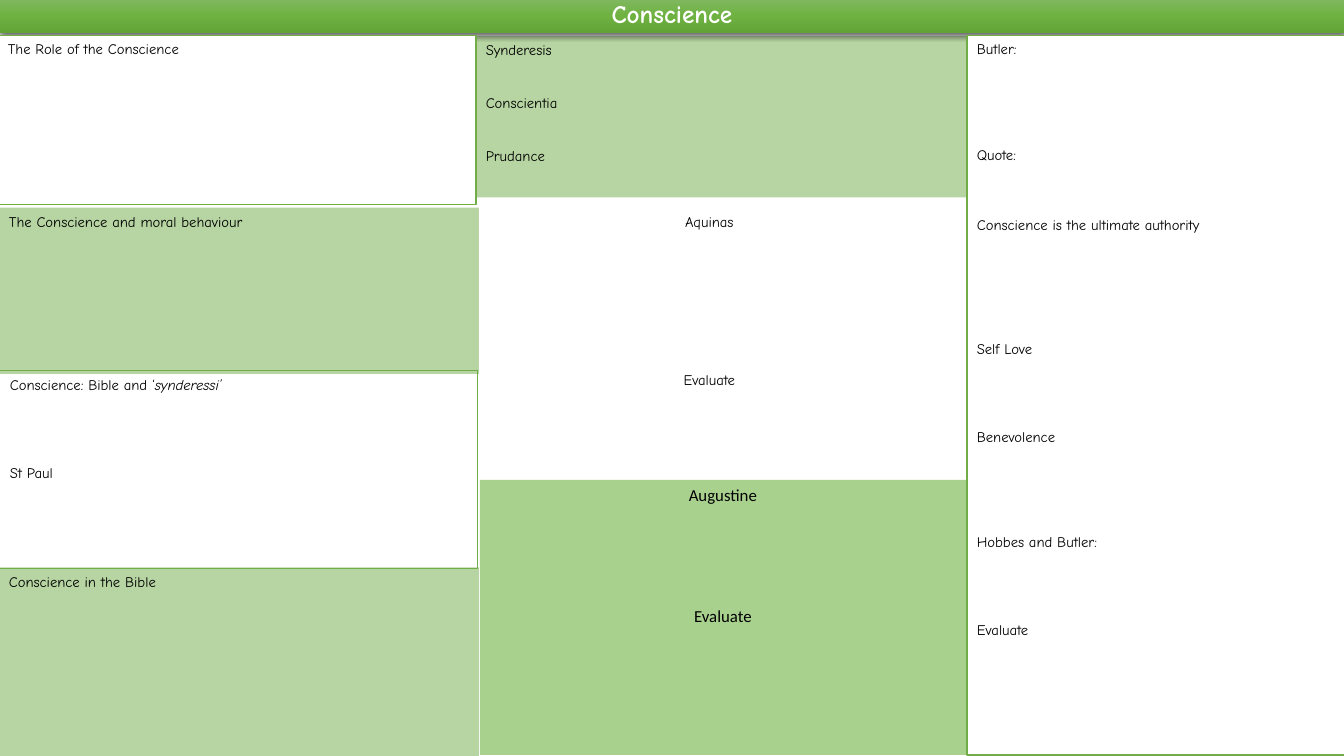
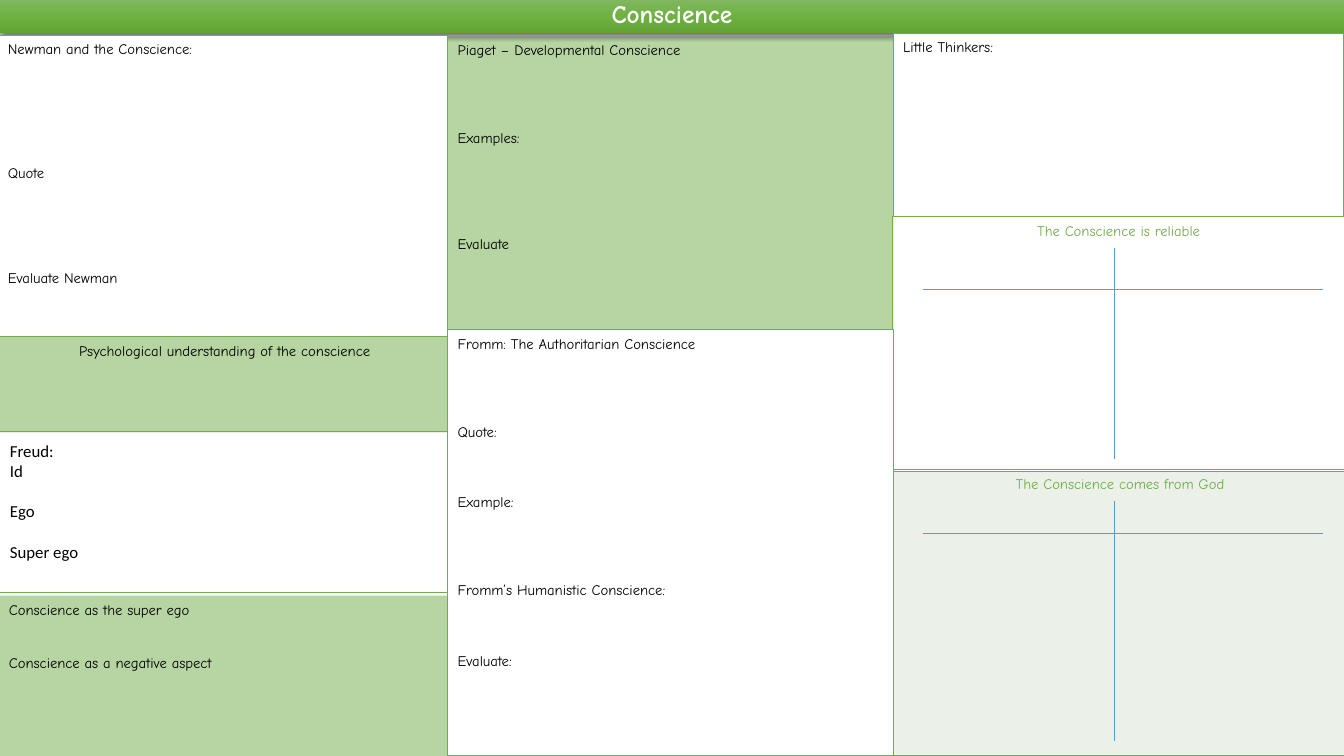
from lxml import etree
from pptx import Presentation
from pptx.dml.color import RGBColor
from pptx.enum.shapes import MSO_CONNECTOR, MSO_SHAPE
from pptx.enum.text import MSO_ANCHOR, PP_ALIGN
from pptx.oxml import parse_xml
from pptx.oxml.ns import nsdecls, qn
from pptx.util import Inches, Pt

WIDTH, HEIGHT = 13.33, 7.5
BLACK = RGBColor(0x00, 0x00, 0x00)
WHITE = RGBColor(0xFF, 0xFF, 0xFF)
GREEN = RGBColor(0x70, 0xAD, 0x47)
LIGHT_GREEN = RGBColor(0xA9, 0xD1, 0x8E)
PALE_GREEN = RGBColor(0xEB, 0xF1, 0xE9)
BLUE = RGBColor(0x5B, 0x9B, 0xD5)
BAND_STOPS = {
    0: RGBColor(0x81, 0xB8, 0x61),
    50: RGBColor(0x6F, 0xB2, 0x42),
    100: RGBColor(0x62, 0xA3, 0x36),
}

NOTE = {"name": "Comic Neue", "size": Pt(10.5)}
PLAIN = {"name": "Calibri", "size": Pt(12)}
TITLE = {"name": "Comic Neue", "size": Pt(18), "bold": True}
LINE_HEIGHTS = {"Comic Neue": 12.57, "Calibri": 14.4}

LEFT, CENTER = PP_ALIGN.LEFT, PP_ALIGN.CENTER


def write_lines(frame, lines, style=NOTE, color=BLACK, align=LEFT):
    """Write (lines left free above, text) pairs; text between asterisks is italic."""
    frame.word_wrap = True
    for index, (free_lines, text) in enumerate(lines):
        paragraph = frame.paragraphs[0] if index == 0 else frame.add_paragraph()
        paragraph.alignment = align
        if free_lines:
            paragraph.space_before = Pt(free_lines * LINE_HEIGHTS[style["name"]])
        for position, part in enumerate(text.split("*")):
            if not part:
                continue
            run = paragraph.add_run()
            run.text = part
            for attribute, value in style.items():
                setattr(run.font, attribute, value)
            run.font.italic = position % 2 == 1
            run.font.color.rgb = color


def add_rectangle(slide, box):
    shape = slide.shapes.add_shape(MSO_SHAPE.RECTANGLE, *map(Inches, box))
    shape.shadow.inherit = False
    shape.line.fill.background()
    shape.text_frame.vertical_anchor = MSO_ANCHOR.TOP
    return shape


def add_panel(slide, box, lines=(), fill=None, opacity=100, border=0, **text_format):
    shape = add_rectangle(slide, box)
    if fill is None:
        shape.fill.background()
    else:
        shape.fill.solid()
        shape.fill.fore_color.rgb = fill
    if opacity < 100:
        color = shape.fill._xPr.find(qn("a:solidFill"))[0]
        etree.SubElement(color, qn("a:alpha"), val=str(opacity * 1000))
    if border:
        shape.line.color.rgb = GREEN
        shape.line.width = Pt(border)
    write_lines(shape.text_frame, lines, **text_format)


def add_tinted_panel(slide, box, lines, **text_format):
    add_panel(slide, box, lines, GREEN, opacity=50, **text_format)


def add_framed_panel(slide, box, lines):
    add_panel(slide, box, lines, WHITE, border=1)


def add_title_band(slide, title="Conscience"):
    band = add_rectangle(slide, (0, -0.02, WIDTH, 0.35))
    stops = "".join(
        f'<a:gs pos="{place * 1000}"><a:srgbClr val="{color}"/></a:gs>'
        for place, color in BAND_STOPS.items()
    )
    properties = band._element.spPr
    properties.find(qn("a:prstGeom")).addnext(parse_xml(
        f'<a:gradFill {nsdecls("a")}><a:gsLst>{stops}</a:gsLst>'
        '<a:lin ang="5400000" scaled="0"/></a:gradFill>'
    ))
    properties.find(qn("a:effectLst")).append(parse_xml(
        f'<a:outerShdw {nsdecls("a")} blurRad="{Pt(4.5)}" dist="{Pt(1.5)}" '
        'dir="5400000" rotWithShape="0"><a:srgbClr val="000000">'
        '<a:alpha val="63000"/></a:srgbClr></a:outerShdw>'
    ))
    frame = band.text_frame
    frame.vertical_anchor = MSO_ANCHOR.MIDDLE
    write_lines(frame, [(0, title)], TITLE, WHITE, CENTER)
    frame.paragraphs[0].line_spacing = 0.9


def add_table_panel(slide, box, lines, **text_format):
    """Add a one-cell table with a green border."""
    table = slide.shapes.add_table(1, 1, *map(Inches, box)).table
    table.first_row = table.horz_banding = False
    cell = table.cell(0, 0)
    cell.fill.solid()
    cell.fill.fore_color.rgb = PALE_GREEN
    properties = cell._tc.get_or_add_tcPr()
    for index, side in enumerate(("lnL", "lnR", "lnT", "lnB")):
        properties.insert(index, parse_xml(
            f'<a:{side} {nsdecls("a")} w="{Pt(1)}"><a:solidFill>'
            f'<a:srgbClr val="{GREEN}"/></a:solidFill></a:{side}>'
        ))
    write_lines(cell.text_frame, lines, **text_format)


def add_line(slide, *ends):
    line = slide.shapes.add_connector(MSO_CONNECTOR.STRAIGHT, *map(Inches, ends))
    line.line.color.rgb = BLUE
    line.line.width = Pt(0.5)
    etree.SubElement(line._element.spPr, qn("a:effectLst"))


def add_argument_cross(slide, top, bar, bottom):
    """Draw the two lines that part the arguments for and against."""
    add_line(slide, 9.15, bar, 13.12, bar)
    add_line(slide, 11.05, top, 11.05, bottom)


def build_thinkers_slide(slide):
    add_tinted_panel(slide, (4.72, 0.36, 4.86, 1.6), [
        (0, "Synderesis"), (2, "Conscientia"), (2, "Prudance")])
    add_title_band(slide)
    add_framed_panel(slide, (-0.02, 0.35, 4.74, 1.68), [(0, "The Role of the Conscience")])
    add_tinted_panel(slide, (-0.01, 2.06, 4.76, 1.65), [
        (0, "The Conscience and moral behaviour")])
    add_framed_panel(slide, (9.59, 0.35, 3.75, 7.14), [
        (0, "Butler:"),
        (5, "Quote:"),
        (3, "Conscience is the ultimate authority"),
        (6, "Self Love"),
        (4, "Benevolence"),
        (5, "Hobbes and Butler:"),
        (4, "Evaluate"),
    ])
    add_tinted_panel(slide, (-0.01, 5.63, 4.76, 1.87), [(0, "Conscience in the Bible")])
    add_panel(slide, (0, 3.68, 4.74, 1.96), [
        (0, "Conscience: Bible and ‘*synderessi’*"), (4, "St Paul")], border=0.75)
    add_panel(slide, (5.01, 2.06, 4.05, 2.09), [(0, "Aquinas"), (8, "Evaluate")],
              WHITE, opacity=50, align=CENTER)
    add_panel(slide, (4.76, 4.76, 4.82, 2.73), [(0, "Augustine"), (5, "Evaluate")],
              LIGHT_GREEN, style=PLAIN, align=CENTER)


def build_psychology_slide(slide):
    heading = {"color": GREEN, "align": CENTER}
    add_tinted_panel(slide, (4.44, 0.36, 4.42, 2.91), [
        (0, "Piaget – Developmental Conscience"), (4, "Examples:"), (5, "Evaluate")])
    add_panel(slide, (8.85, 2.15, 4.49, 2.51), [(0, "The Conscience is reliable")],
              border=0.75, **heading)
    add_title_band(slide)
    add_framed_panel(slide, (-0.02, 0.35, 4.46, 2.99), [
        (0, "Newman and the Conscience:"), (6, "Quote"), (5, "Evaluate Newman")])
    add_tinted_panel(slide, (0, 3.34, 4.46, 0.95), [
        (0, "Psychological understanding of the conscience")], align=CENTER)
    add_framed_panel(slide, (8.86, 0.33, 4.47, 1.82), [(0, "Little Thinkers:")])
    add_tinted_panel(slide, (-0.01, 5.91, 4.45, 1.59), [
        (0, "Conscience as the super ego"), (2, "Conscience as a negative aspect")])
    add_table_panel(slide, (8.86, 4.68, 4.5, 2.82), [
        (0, "The Conscience comes from God")], **heading)
    add_panel(slide, (0, 4.28, 4.44, 1.6), border=0.75)
    add_framed_panel(slide, (4.44, 3.27, 4.42, 4.23), [
        (0, "Fromm: The Authoritarian Conscience"),
        (4, "Quote:"),
        (3, "Example:"),
        (4, "Fromm’s Humanistic Conscience:"),
        (3, "Evaluate:"),
    ])
    freud = slide.shapes.add_textbox(*map(Inches, (0, 4.32, 2.22, 1.31)))
    write_lines(freud.text_frame, [
        (0, "Freud:"), (0, "Id"), (1, "Ego"), (1, "Super ego")], PLAIN)
    add_argument_cross(slide, 2.46, 2.87, 4.55)
    add_argument_cross(slide, 4.97, 5.29, 7.35)


def main():
    presentation = Presentation()
    presentation.slide_width = Inches(WIDTH)
    presentation.slide_height = Inches(HEIGHT)
    blank = presentation.slide_layouts[6]
    for build in (build_thinkers_slide, build_psychology_slide):
        build(presentation.slides.add_slide(blank))
    presentation.save("out.pptx")


if __name__ == "__main__":
    main()
